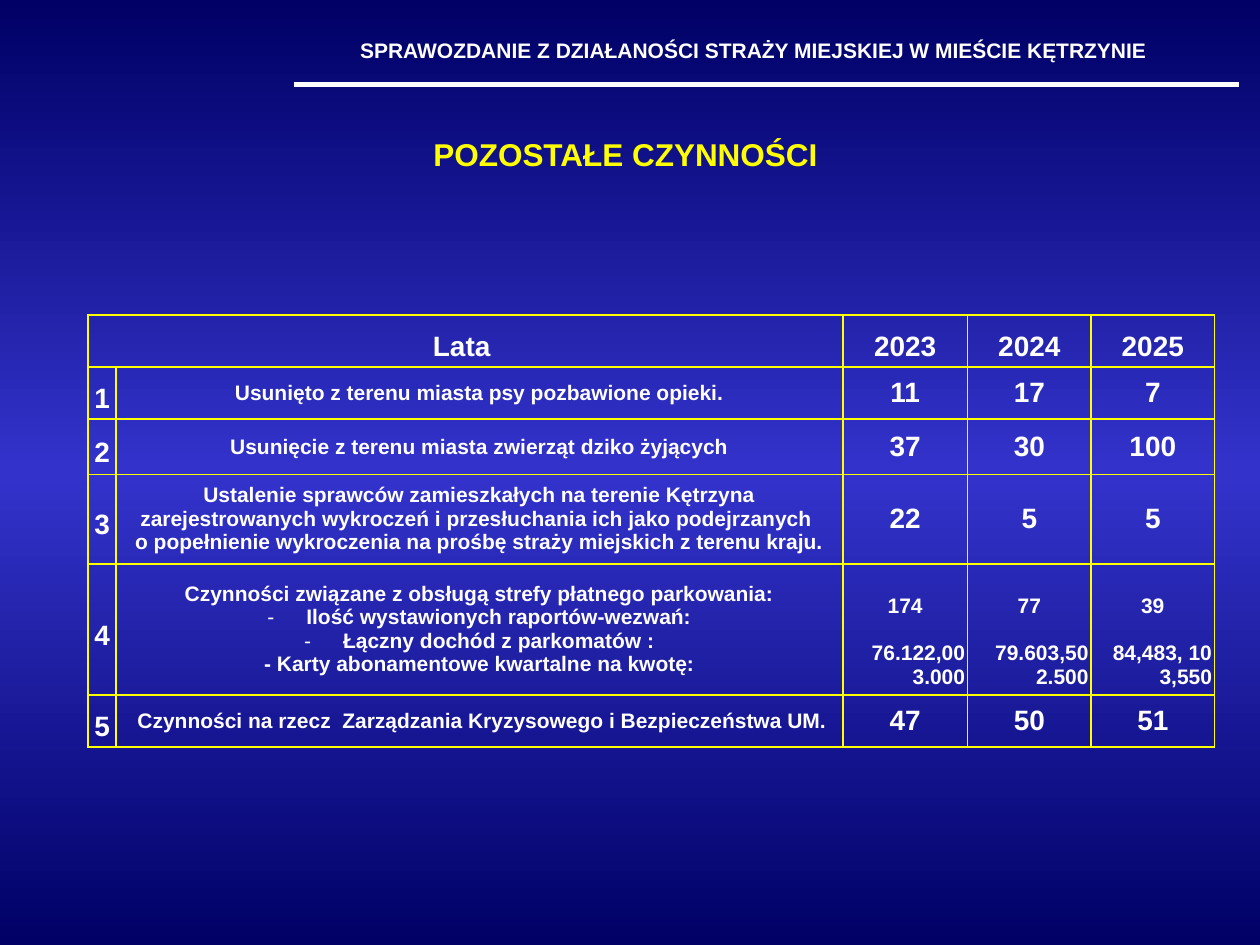
from copy import deepcopy

from lxml import etree
from pptx import Presentation
from pptx.dml.color import RGBColor
from pptx.enum.shapes import MSO_CONNECTOR
from pptx.enum.text import MSO_ANCHOR, PP_ALIGN
from pptx.oxml.ns import qn
from pptx.util import Inches, Pt

STRAIGHT = MSO_CONNECTOR.STRAIGHT
MIDDLE = MSO_ANCHOR.MIDDLE
CENTER, RIGHT = PP_ALIGN.CENTER, PP_ALIGN.RIGHT

NAVY = RGBColor(0x00, 0x00, 0x66)
BLUE = RGBColor(0x33, 0x33, 0xCC)
WHITE = RGBColor(0xFF, 0xFF, 0xFF)
YELLOW = RGBColor(0xFF, 0xFF, 0x00)

LARGE, SMALL = 16, 12
LINE_GAP = Pt(13.8)

COLUMN_WIDTHS = (0.22, 5.77, 0.99, 0.98, 0.98)
ROW_HEIGHTS = (0.41, 0.41, 0.44, 0.71, 1.04, 0.41)
YEARS = ("2023", "2024", "2025")
PARKING_ROW = 4
# Row number, description, yearly values
ACTIVITIES = (
    ("1", "Usunięto z terenu miasta psy pozbawione opieki.", ("11", "17", "7")),
    ("2", "Usunięcie z terenu miasta zwierząt dziko żyjących", ("37", "30", "100")),
    ("3 ", "Ustalenie sprawców zamieszkałych na terenie Kętrzyna "
           "zarejestrowanych wykroczeń i przesłuchania ich jako podejrzanych \n"
           "o popełnienie wykroczenia na prośbę straży miejskich z terenu kraju.",
     ("22", "5", "5")),
    ("4", ("Czynności związane z obsługą strefy płatnego parkowania:",
           "Ilość wystawionych raportów-wezwań:",
           "Łączny dochód z parkomatów :",
           "- Karty abonamentowe kwartalne na kwotę:"),
     (("174", "76.122,00", "3.000"),
      ("77", "79.603,50", "2.500"),
      ("39", "84,483, 10", "3,550"))),
    ("5", " Czynności na rzecz  Zarządzania Kryzysowego i Bezpieczeństwa UM.",
     ("47", "50", "51")),
)


def set_background(slide):
    fill = slide.background.fill
    fill.gradient()
    fill.gradient_angle = 90
    stop_list = slide.element.find(".//" + qn("a:gsLst"))
    stop_list.append(deepcopy(stop_list[0]))
    for stop, position, color in zip(fill.gradient_stops, (0, 0.5, 1), (NAVY, BLUE, NAVY)):
        stop.position = position
        stop.color.rgb = color


def write(paragraph, text, size, color=WHITE, **layout):
    """Fill a paragraph with bold text; layout holds paragraph attributes."""
    paragraph.text = text
    for name, value in {"alignment": CENTER, **layout}.items():
        setattr(paragraph, name, value)
    for run in paragraph.runs:
        font_format = {"name": "Arial", "size": Pt(size), "bold": True}
        for name, value in font_format.items():
            setattr(run.font, name, value)
        run.font.color.rgb = color


def add_heading(slide, text, box, size, color):
    frame = slide.shapes.add_textbox(*map(Inches, box)).text_frame
    frame.word_wrap = True
    write(frame.paragraphs[0], text, size, color)


def add_rule(slide):
    rule = slide.shapes.add_connector(
        STRAIGHT, Inches(2.33), Inches(0.67), Inches(9.83), Inches(0.67))
    rule.line.color.rgb = WHITE
    rule.line.width = Pt(3)
    etree.SubElement(rule.element.spPr, qn("a:effectLst"))


def add_dash(paragraph):
    properties = paragraph._p.get_or_add_pPr()
    properties.set("marL", str(Inches(0.31)))
    properties.set("indent", str(Inches(-0.31)))
    etree.SubElement(properties, qn("a:buFont"), typeface="Arial")
    etree.SubElement(properties, qn("a:buChar"), char="-")


def format_cell(cell):
    for side in ("left", "right", "top", "bottom"):
        setattr(cell, "margin_" + side, Inches(0.02))
    cell.vertical_anchor = MIDDLE
    properties = cell._tc.get_or_add_tcPr()
    for tag in ("a:lnL", "a:lnR", "a:lnT", "a:lnB"):
        border = etree.SubElement(properties, qn(tag), w=str(Pt(1)))
        solid = etree.SubElement(border, qn("a:solidFill"))
        etree.SubElement(solid, qn("a:srgbClr"), val=str(YELLOW))
    cell.fill.background()


def cell_paragraphs(cell, count):
    frame = cell.text_frame
    return [frame.paragraphs[0]] + [frame.add_paragraph() for _ in range(count - 1)]


def write_cell(cell, text, size, **layout):
    write(cell.text_frame.paragraphs[0], text, size, **layout)


def write_parking_tasks(cell, tasks):
    paragraphs = cell_paragraphs(cell, len(tasks))
    for paragraph in paragraphs[1:3]:
        add_dash(paragraph)
    for paragraph, task in zip(paragraphs, tasks):
        write(paragraph, task, SMALL)


def write_parking_values(cell, values):
    """Write the count, then the two amounts one line lower."""
    cell.margin_top = Inches(0.21)
    count, income, passes = cell_paragraphs(cell, len(values))
    write(count, values[0], SMALL)
    write(income, values[1], SMALL, alignment=RIGHT, space_before=LINE_GAP)
    write(passes, values[2], SMALL, alignment=RIGHT)


def add_activity_table(slide):
    table = slide.shapes.add_table(
        len(ROW_HEIGHTS), len(COLUMN_WIDTHS), Inches(0.7), Inches(2.5),
        Inches(sum(COLUMN_WIDTHS)), Inches(sum(ROW_HEIGHTS))).table
    table.first_row = table.horz_banding = False
    for column, width in zip(table.columns, COLUMN_WIDTHS):
        column.width = Inches(width)
    for row, height in zip(table.rows, ROW_HEIGHTS):
        row.height = Inches(height)
    for cell in table.iter_cells():
        format_cell(cell)

    table.cell(0, 0).merge(table.cell(0, 1))
    write_cell(table.cell(0, 0), "Lata ", LARGE, line_spacing=1.4)
    for column, year in enumerate(YEARS, 2):
        write_cell(table.cell(0, column), year, LARGE, line_spacing=1.4)

    for row, (number, task, values) in enumerate(ACTIVITIES, 1):
        write_cell(table.cell(row, 0), number, LARGE, line_spacing=1.4)
        if row == PARKING_ROW:
            write_parking_tasks(table.cell(row, 1), task)
        else:
            write_cell(table.cell(row, 1), task, SMALL)
        for column, value in enumerate(values, 2):
            if row == PARKING_ROW:
                write_parking_values(table.cell(row, column), value)
            else:
                write_cell(table.cell(row, column), value, LARGE)


def main():
    presentation = Presentation()
    presentation.slide_width, presentation.slide_height = Inches(10), Inches(7.5)
    slide = presentation.slides.add_slide(presentation.slide_layouts[6])
    set_background(slide)
    add_heading(slide, "SPRAWOZDANIE Z DZIAŁANOŚCI STRAŻY MIEJSKIEJ W MIEŚCIE KĘTRZYNIE ",
                (2.17, 0.25, 7.67, 0.3), 12, WHITE)
    add_rule(slide)
    add_heading(slide, "POZOSTAŁE CZYNNOŚCI ", (0, 1.02, 10, 0.4), 18, YELLOW)
    add_activity_table(slide)
    presentation.save("out.pptx")


if __name__ == "__main__":
    main()
